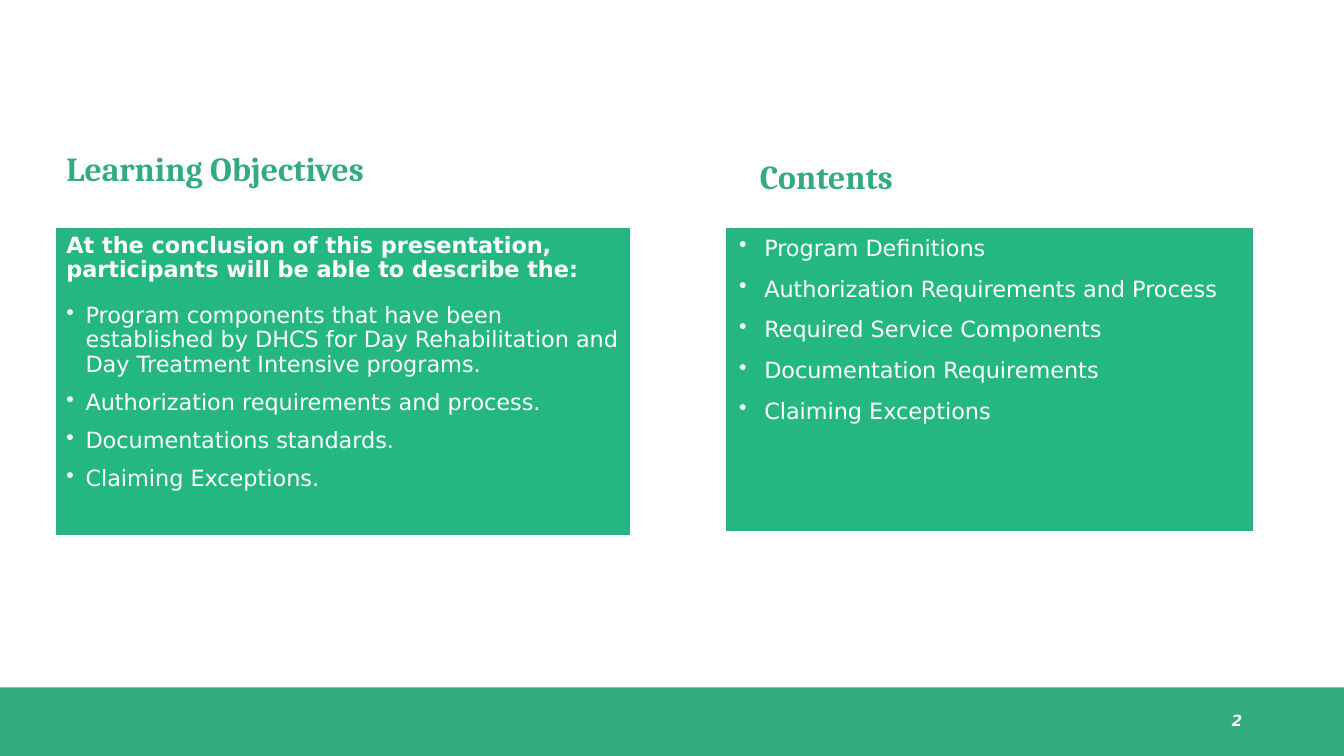
import pptx
import pptx.dml.color
import pptx.enum.shapes
import pptx.enum.text
import pptx.oxml.ns
import pptx.util
import lxml.etree

WIDTH = pptx.util.Inches(13.33)
HEIGHT = pptx.util.Inches(7.5)
COLORS = {"footer": "33AB7E", "heading": "33AB7E", "panel": "25B781", "text": "FFFFFF"}
HEADING = {"name": "Cambria", "size": pptx.util.Pt(24), "bold": True}
BODY = {"name": "DejaVu Sans", "size": pptx.util.Pt(16), "bold": False}
LEAD = {**BODY, "bold": True}
PAGE_NUMBER = {"name": "DejaVu Sans", "size": pptx.util.Pt(11), "bold": True, "italic": True}
MIDDLE = pptx.enum.text.MSO_ANCHOR.MIDDLE
TOP = pptx.enum.text.MSO_ANCHOR.TOP
LEFT = pptx.enum.text.PP_ALIGN.LEFT
RIGHT = pptx.enum.text.PP_ALIGN.RIGHT

OBJECTIVES_LEAD = "At the conclusion of this presentation, participants will be able to describe the:"
OBJECTIVES = [
    "Program components that have been established by DHCS for Day Rehabilitation "
    "and Day Treatment Intensive programs.",
    "Authorization requirements and process.",
    "Documentations standards.",
    "Claiming Exceptions.",
]
CONTENTS = [
    "Program Definitions",
    "Authorization Requirements and Process",
    "Required Service Components",
    "Documentation Requirements",
    "Claiming Exceptions",
]


def rgb(color):
    return pptx.dml.color.RGBColor.from_string(COLORS[color])


def place(left, top, width, height):
    return [round(share * side / 100) for share, side in
            zip((left, top, width, height), (WIDTH, HEIGHT, WIDTH, HEIGHT))]


def apply(target, formats):
    for key, value in formats.items():
        setattr(target, key, value)


def write(paragraph, words, font, color, formats):
    apply(paragraph, formats)
    run = paragraph.add_run()
    run.text = words
    apply(run.font, font)
    run.font.color.rgb = rgb(color)


def add_label(slide, area, words, font, color, formats):
    frame = slide.shapes.add_textbox(*place(*area)).text_frame
    apply(frame, {"word_wrap": True, "vertical_anchor": MIDDLE})
    write(frame.paragraphs[0], words, font, color, formats)


def add_block(slide, area, fill, outline=None):
    block = slide.shapes.add_shape(pptx.enum.shapes.MSO_SHAPE.RECTANGLE, *place(*area))
    block.shadow.inherit = False
    block.fill.solid()
    block.fill.fore_color.rgb = rgb(fill)
    if outline:
        block.line.color.rgb = rgb(outline)
        block.line.width = pptx.util.Pt(0.75)
    else:
        block.line.fill.background()
    return block


def set_bullet(paragraph, indent):
    properties = paragraph._p.get_or_add_pPr()
    properties.set("marL", str(pptx.util.Inches(indent)))
    properties.set("indent", str(-pptx.util.Inches(indent)))
    bullet = lxml.etree.SubElement(properties, pptx.oxml.ns.qn("a:buChar"))
    bullet.set("char", "•")


def add_panel(slide, area, items, indent, spacing, inset, lead=None):
    frame = add_block(slide, area, "panel", "heading").text_frame
    apply(frame, {"word_wrap": True, "vertical_anchor": TOP,
                  "margin_left": pptx.util.Inches(inset),
                  "margin_right": pptx.util.Inches(0.1)})
    paragraph = frame.paragraphs[0]
    layout = {"alignment": LEFT, "line_spacing": spacing}
    if lead:
        write(paragraph, lead, LEAD, "text", {**layout, "space_after": pptx.util.Pt(6)})
    for index, item in enumerate(items):
        if index or lead:
            paragraph = frame.add_paragraph()
            layout["space_before"] = pptx.util.Pt(10)
        set_bullet(paragraph, indent)
        write(paragraph, item, BODY, "text", layout)


def main():
    presentation = pptx.Presentation()
    apply(presentation, {"slide_width": WIDTH, "slide_height": HEIGHT})
    slide = presentation.slides.add_slide(presentation.slide_layouts[6])
    heading_format = {"alignment": LEFT, "line_spacing": 0.9}

    add_block(slide, (0, 90.93, 100, 9.07), "footer")
    add_label(slide, (70.67, 92.67, 22.5, 5.33), "2", PAGE_NUMBER, "text", {"alignment": RIGHT})
    add_label(slide, (4.2, 17.33, 40.96, 10.4), "Learning Objectives",
              HEADING, "heading", heading_format)
    add_panel(slide, (4.2, 30.27, 42.61, 40.4), OBJECTIVES, 0.19, 0.9, 0.1, OBJECTIVES_LEAD)
    add_label(slide, (55.81, 17.33, 40.96, 12.67), "Contents",
              HEADING, "heading", heading_format)
    add_panel(slide, (54.09, 30.27, 39.08, 39.87), CONTENTS, 0.25, 1.0, 0.12)

    presentation.save("out.pptx")


if __name__ == "__main__":
    main()
